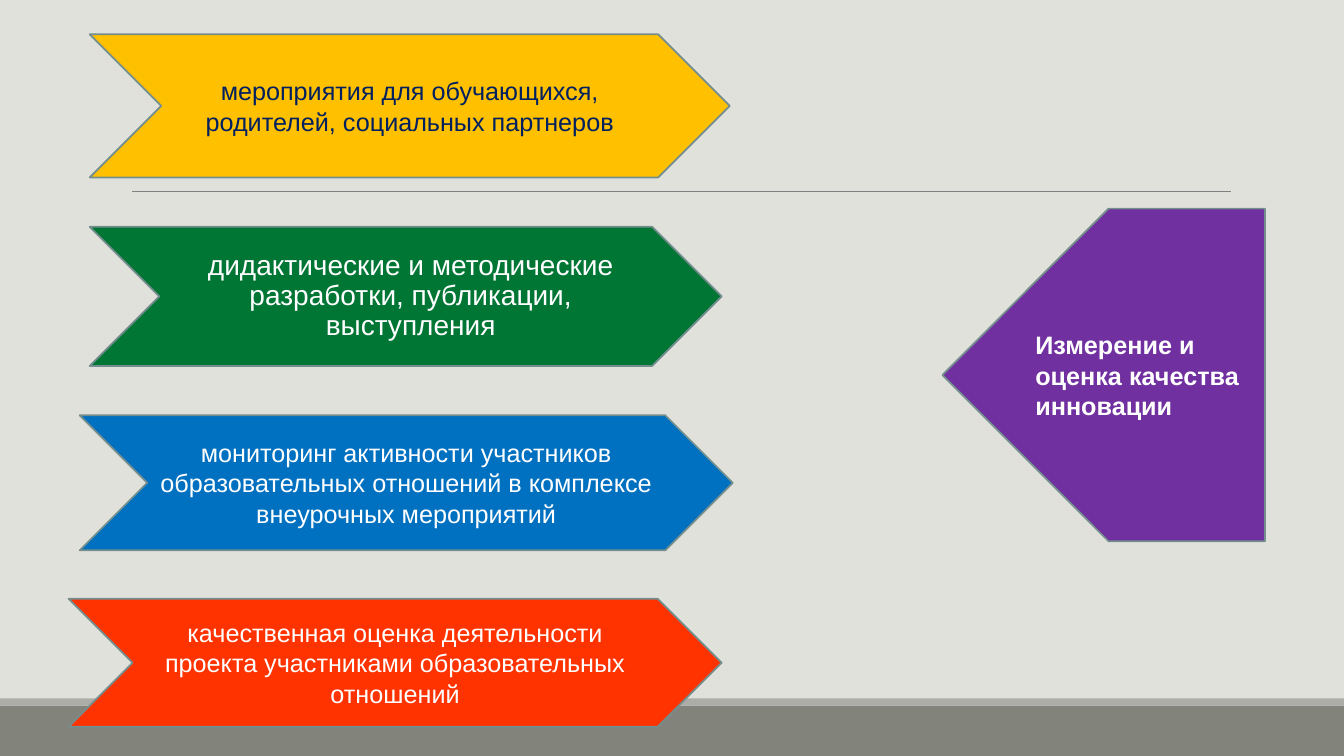
from dataclasses import dataclass

from lxml import etree
from pptx import Presentation
from pptx.dml.color import RGBColor
from pptx.enum.shapes import MSO_CONNECTOR, MSO_SHAPE
from pptx.enum.text import MSO_ANCHOR, PP_ALIGN
from pptx.oxml.ns import qn
from pptx.util import Pt

RECT, CHEVRON, PENTAGON = MSO_SHAPE.RECTANGLE, MSO_SHAPE.CHEVRON, MSO_SHAPE.PENTAGON
STRAIGHT = MSO_CONNECTOR.STRAIGHT
MIDDLE = MSO_ANCHOR.MIDDLE
CENTER, LEFT = PP_ALIGN.CENTER, PP_ALIGN.LEFT


@dataclass(frozen=True)
class Theme:
    font: str = "Arial"
    body: int = 18
    large: int = 20
    background: str = "E1E1DB"
    footer: str = "82847C"
    footer_edge: str = "ACADA8"
    rule: str = "808080"
    outline: str = "748D8D"
    white: str = "FFFFFF"
    navy: str = "002060"
    yellow: str = "FFC000"
    green: str = "007635"
    blue: str = "0070C0"
    red: str = "FF3300"
    purple: str = "7030A0"


THEME = Theme()
WIDTH, HEIGHT = 960, 540

# Box in points, fill, text, text colour, text size
ACTIVITIES = [
    ((64.08, 24.48, 457.2, 102.24), THEME.yellow,
     "мероприятия для обучающихся, родителей, социальных партнеров",
     THEME.navy, THEME.body),
    ((64.08, 162, 451.44, 99.36), THEME.green,
     "дидактические и методические разработки, публикации, выступления",
     THEME.white, THEME.large),
    ((56.88, 296.64, 466.56, 96.48), THEME.blue,
     "мониторинг активности участников образовательных отношений "
     "в комплексе внеурочных мероприятий",
     THEME.white, THEME.body),
    ((48.96, 427.68, 466.56, 91.44), THEME.red,
     "качественная оценка деятельности проекта участниками "
     "образовательных отношений",
     THEME.white, THEME.body),
]


def rgb(value):
    return RGBColor.from_string(value)


def set_all(target, values):
    for name, value in values.items():
        setattr(target, name, value)


def add_block(s, kind, box, fill, outline=None):
    sp = s.shapes.add_shape(kind, *map(Pt, box))
    sp.shadow.inherit = False
    sp.fill.solid()
    sp.fill.fore_color.rgb = rgb(fill)
    if outline:
        sp.line.color.rgb = rgb(outline)
        sp.line.width = Pt(1.25)
    else:
        sp.line.fill.background()
    return sp


def add_rule(s, x1, x2, y):
    line = s.shapes.add_connector(STRAIGHT, Pt(x1), Pt(y), Pt(x2), Pt(y))
    line.line.color.rgb = rgb(THEME.rule)
    line.line.width = Pt(0.5)
    etree.SubElement(line._element.spPr, qn("a:effectLst"))


def write(sp, text, color, size, align, bold=False):
    tf = sp.text_frame
    set_all(tf, {"word_wrap": True, "vertical_anchor": MIDDLE})
    p = tf.paragraphs[0]
    p.alignment = align
    r = p.add_run()
    r.text = text
    set_all(r.font, {"name": THEME.font, "size": Pt(size), "bold": bold})
    r.font.color.rgb = rgb(color)
    return tf


def set_body_spacing(tf):
    set_all(tf, {"margin_left": 0, "margin_right": 0})
    p = tf.paragraphs[0]
    set_all(p, {"line_spacing": 0.9, "space_before": Pt(12), "space_after": Pt(2)})
    p._p.get_or_add_pPr().set("marL", str(Pt(7.2)))


def add_activity(s, box, fill, text, color, size):
    sp = add_block(s, CHEVRON, box, fill, THEME.outline)
    tf = write(sp, text, color, size, CENTER)
    if size == THEME.large:
        set_body_spacing(tf)


def add_result(s, box, text):
    sp = add_block(s, PENTAGON, box, THEME.purple, THEME.outline)
    sp.adjustments[0] = 0.515
    sp._element.spPr.find(qn("a:xfrm")).set("flipH", "1")
    write(sp, text, THEME.white, THEME.body, LEFT, bold=True)


def main():
    prs = Presentation()
    set_all(prs, {"slide_width": Pt(WIDTH), "slide_height": Pt(HEIGHT)})
    s = prs.slides.add_slide(prs.slide_layouts[6])

    # Background, footer band and rule
    s.background.fill.solid()
    s.background.fill.fore_color.rgb = rgb(THEME.background)
    add_block(s, RECT, (0, 504, WIDTH, 36), THEME.footer)
    add_block(s, RECT, (0, 498.96, WIDTH, 5.04), THEME.footer_edge)
    add_rule(s, 94.32, 879.12, 136.8)

    # Result arrow on the right
    add_result(s, (673.2, 149.04, 230.4, 237.6),
               "Измерение и оценка качества инновации")

    # Activity arrows on the left
    for activity in ACTIVITIES:
        add_activity(s, *activity)

    prs.save("out.pptx")


if __name__ == "__main__":
    main()
